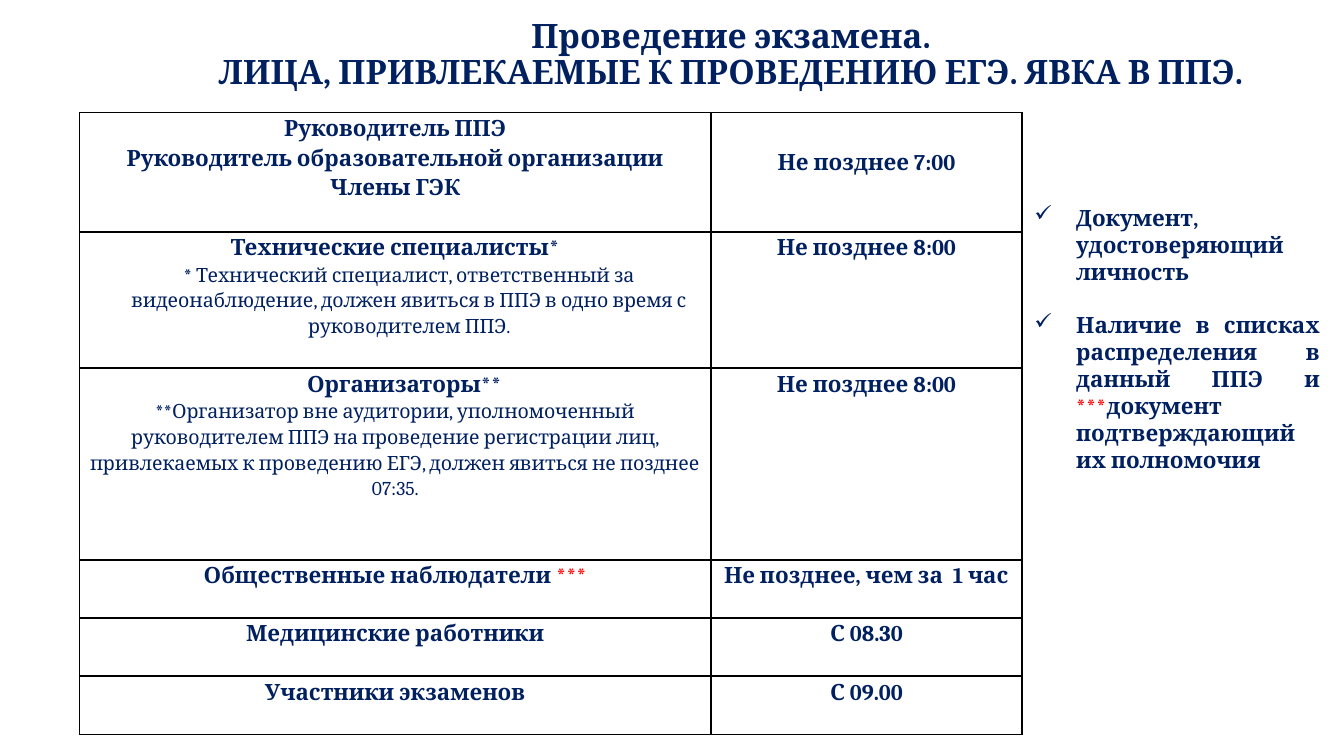
from dataclasses import dataclass

from lxml.etree import SubElement
from pptx import Presentation
from pptx.dml.color import RGBColor
from pptx.enum.text import MSO_ANCHOR, MSO_AUTO_SIZE, PP_ALIGN
from pptx.oxml.ns import qn
from pptx.util import Cm, Pt

NAVY = RGBColor(0x00, 0x20, 0x60)
RED = RGBColor(0xFF, 0x00, 0x00)
WHITE = RGBColor(0xFF, 0xFF, 0xFF)
FONT = "Cambria"


@dataclass
class Span:
    text: str
    size: float = 12
    bold: bool = True
    color: RGBColor = NAVY


@dataclass
class Para:
    spans: list[Span]
    align: PP_ALIGN = PP_ALIGN.CENTER
    indent: float = 0  # cm
    spacing: float = 1.15
    before: float = 0  # pt
    bullet: str = ""


@dataclass
class Row:
    height: float  # cm
    who: list[Para]
    when: str
    anchor: MSO_ANCHOR = MSO_ANCHOR.TOP
    bottom: float = 0  # cm, space under the time


def line(text: str, indent: float = 0) -> Para:
    return Para([Span(text)], indent=indent)


def note(text: str, indent: float = 0) -> Para:
    return Para([Span(text, 10.5, False)], indent=indent)


ROWS = [
    Row(2.25, [line("Руководитель ППЭ"),
               line("Руководитель образовательной организации"),
               line("Члены ГЭК")],
        "Не позднее 7:00", MSO_ANCHOR.MIDDLE, 0.43),
    Row(2.58, [line("Технические специалисты*"),
               note("* Технический специалист, ответственный за видеонаблюдение, "
                    "должен явиться в ППЭ в одно время с руководителем ППЭ.", 0.53)],
        "Не позднее 8:00"),
    Row(3.62, [line("Организаторы**", 0.34),
               note("**Организатор вне аудитории, уполномоченный руководителем ППЭ "
                    "на проведение регистрации лиц, привлекаемых к проведению ЕГЭ, "
                    "должен явиться не позднее 07:35.")],
        "Не позднее 8:00"),
    Row(1.1, [Para([Span("Общественные наблюдатели "), Span("***", color=RED)])],
        "Не позднее, чем за  1 час"),
    Row(1.1, [line("Медицинские работники")], "С 08.30"),
    Row(1.1, [line("Участники экзаменов")], "С 09.00"),
]

CHECKLIST = [
    Para([Span("Документ, удостоверяющий личность")],
         PP_ALIGN.LEFT, 0.79, 1, bullet="✓"),
    Para([Span("Наличие в списках распределения в данный ППЭ и "),
          Span("***", color=RED),
          Span("документ подтверждающий их полномочия")],
         PP_ALIGN.JUSTIFY, 0.79, 1, 14.4, "✓"),
]


def add_run(p, span: Span) -> None:
    r = p.add_run()
    r.text = span.text
    r.font.name = FONT
    r.font.size = Pt(span.size)
    r.font.bold = span.bold
    r.font.color.rgb = span.color


def set_indent(p, left: float, first: float = 0) -> None:
    pPr = p._p.get_or_add_pPr()
    pPr.set("marL", str(Cm(left)))
    pPr.set("indent", str(Cm(first)))


def fill_text(tf, paras: list[Para]) -> None:
    for i, para in enumerate(paras):
        p = tf.add_paragraph() if i else tf.paragraphs[0]
        set_indent(p, para.indent, -para.indent if para.bullet else 0)
        if para.bullet:
            SubElement(p._p.get_or_add_pPr(), qn("a:buChar"), char=para.bullet)
        p.alignment = para.align
        p.line_spacing = para.spacing
        if para.before:
            p.space_before = Pt(para.before)
        for span in para.spans:
            add_run(p, span)


def style_cell(cell) -> None:
    cell.margin_left = cell.margin_right = cell.margin_top = cell.margin_bottom = 0
    tcPr = cell._tc.get_or_add_tcPr()
    for side in ("lnL", "lnR", "lnT", "lnB"):
        ln = SubElement(tcPr, qn(f"a:{side}"), w=str(Pt(1)))
        SubElement(SubElement(ln, qn("a:solidFill")), qn("a:srgbClr"), val="000000")
    cell.fill.solid()
    cell.fill.fore_color.rgb = WHITE


def add_title(s) -> None:
    sp = s.shapes.title
    sp.left, sp.top, sp.width, sp.height = Cm(1.9), Cm(0.36), Cm(22.86), Cm(1.37)
    tf = sp.text_frame
    tf.auto_size = MSO_AUTO_SIZE.NONE
    tf.vertical_anchor = MSO_ANCHOR.MIDDLE
    p = tf.paragraphs[0]
    set_indent(p, 0.97)
    p.alignment = PP_ALIGN.CENTER
    p.line_spacing = 0.9
    p.space_before = Pt(0)
    add_run(p, Span("Проведение экзамена.", 18))
    p.add_line_break()
    add_run(p, Span("ЛИЦА, ПРИВЛЕКАЕМЫЕ К ПРОВЕДЕНИЮ ЕГЭ. ЯВКА В ППЭ.", 18))


def add_schedule(s) -> None:
    height = sum(row.height for row in ROWS)
    table = s.shapes.add_table(len(ROWS), 2, Cm(1.5), Cm(2.13),
                               Cm(17.81), Cm(height)).table
    table.first_row = table.horz_banding = False
    table.columns[0].width, table.columns[1].width = Cm(11.94), Cm(5.87)
    for i, row in enumerate(ROWS):
        table.rows[i].height = Cm(row.height)
        who, when = table.cell(i, 0), table.cell(i, 1)
        for cell, paras in ((who, row.who), (when, [line(row.when)])):
            style_cell(cell)
            fill_text(cell.text_frame, paras)
        when.vertical_anchor = row.anchor
        when.margin_bottom = Cm(row.bottom)


def add_checklist(s) -> None:
    sp = s.shapes.add_textbox(Cm(19.3), Cm(3.73), Cm(5.9), Cm(7.26))
    sp.text_frame.word_wrap = True
    fill_text(sp.text_frame, CHECKLIST)


def main() -> None:
    prs = Presentation()
    prs.slide_width, prs.slide_height = Cm(25.4), Cm(14.29)
    s = prs.slides.add_slide(prs.slide_layouts[5])
    add_title(s)
    add_schedule(s)
    add_checklist(s)
    prs.save("out.pptx")


if __name__ == "__main__":
    main()
